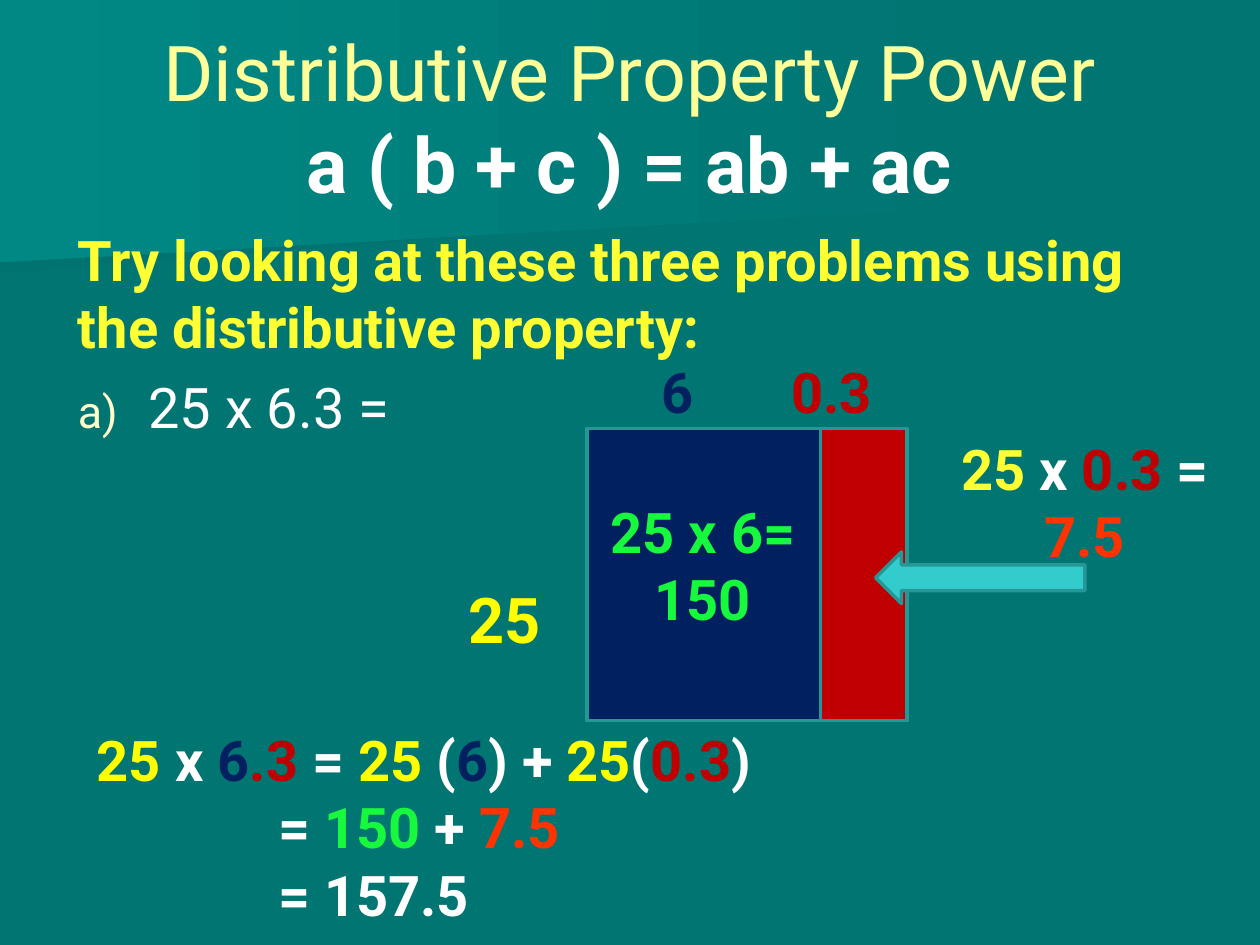
import pptx
import pptx.util
import pptx.dml.color
import pptx.enum.shapes
import pptx.enum.text
import pptx.oxml.ns
import lxml.etree

COLORS = {
    "teal": "007572", "shade": "00726F", "glow": "008885", "edge": "269797",
    "cream": "FFFF99", "bullet": "FFFFCC", "lemon": "FFFF33", "yellow": "FFFF00",
    "white": "FFFFFF", "navy": "002060", "red": "C00000", "orange": "FF3300",
    "green": "17F93D", "aqua": "33CCCC",
}
WIDTH, HEIGHT = pptx.util.Inches(10), pptx.util.Inches(7.5)
COLS, ROWS = 100, 75
CELL = WIDTH // COLS
SHAPE = pptx.enum.shapes.MSO_SHAPE
CENTER = pptx.enum.text.PP_ALIGN.CENTER


def rgb(name):
    return pptx.dml.color.RGBColor.from_string(COLORS[name])


def cells(*counts):
    return [round(n * CELL) for n in counts]


def add_lines(slide, box, lines, size=32, bold=True, align=None):
    tf = slide.shapes.add_textbox(*cells(*box)).text_frame
    tf.word_wrap = True
    for i, runs in enumerate(lines):
        p = tf.add_paragraph() if i else tf.paragraphs[0]
        p.font.name, p.font.size, p.font.bold = "Roboto", pptx.util.Pt(size), bold
        p.alignment = align
        for text, color in runs:
            r = p.add_run()
            r.text = text
            r.font.color.rgb = rgb(color)
    return tf


def indent(p, left, first=0):
    pPr = p._p.get_or_add_pPr()
    pPr.set("marL", str(cells(left)[0]))
    pPr.set("indent", str(cells(first)[0]))
    return pPr


def add_letter_bullet(p, color):
    pPr = indent(p, 5.6, -5.6)
    qn = pptx.oxml.ns.qn
    clr = lxml.etree.Element(qn("a:buClr"))
    lxml.etree.SubElement(clr, qn("a:srgbClr"), val=COLORS[color])
    size = lxml.etree.Element(qn("a:buSzPct"), val="80000")
    num = lxml.etree.Element(qn("a:buAutoNum"), type="alphaLcParenR")
    defaults = pPr.find(qn("a:defRPr"))
    for el in (clr, size, num):
        defaults.addprevious(el)


def add_block(slide, kind, box, color):
    sp = slide.shapes.add_shape(kind, *cells(*box))
    sp.shadow.inherit = False
    sp.fill.solid()
    sp.fill.fore_color.rgb = rgb(color)
    sp.line.color.rgb = rgb("edge")
    sp.line.width = pptx.util.Pt(2)


def add_band(slide, points, color):
    points = [cells(*point) for point in points]
    builder = slide.shapes.build_freeform(*points[0])
    builder.add_line_segments(points[1:])
    sp = builder.convert_to_shape()
    sp.shadow.inherit = False
    sp.line.fill.background()
    sp.fill.gradient()
    sp.fill.gradient_angle = 0
    for stop, name in zip(sp.fill.gradient_stops, (color, "teal")):
        stop.color.rgb = rgb(name)


def backdrop(slide, x, y, w, h):
    slide.background.fill.solid()
    slide.background.fill.fore_color.rgb = rgb("teal")
    mid, right = y + h * 0.47, x + w
    add_band(slide, [(right - 1.4, y + h * 0.71), (x, y + h), (x, mid),
                     (right - 1.3, mid)], "shade")
    add_band(slide, [(right, y + h * 0.75), (x, y + h * 0.96), (x, y),
                     (right, y)], "glow")


def heading(slide, x, y, w, h):
    tf = add_lines(slide, (x, y, w, h), [
        [("Distributive Property Power", "cream")],
        [("a ( b + c ) = ab + ac", "white")],
    ], size=44, bold=False, align=CENTER)
    tf.vertical_anchor = pptx.enum.text.MSO_ANCHOR.MIDDLE
    tf.paragraphs[1].font.bold = True


def problem(slide, x, y, w, h):
    tf = add_lines(slide, (x, y, w, h), [
        [("Try looking at these three problems using the distributive property:", "lemon")],
        [("25 x 6.3 =", "white")],
    ])
    p = tf.paragraphs[1]
    p.font.bold = False
    p.space_before = pptx.util.Pt(7)
    add_letter_bullet(p, "bullet")


def area_model(slide, x, y, w, h):
    whole = w * 0.73
    add_block(slide, SHAPE.RECTANGLE, (x, y, whole, h), "navy")
    add_block(slide, SHAPE.RECTANGLE, (x + whole, y, w - whole, h), "red")
    add_lines(slide, (x - 10.4, y + h / 2, 8.4, 7.1), [[("25", "yellow")]], size=36)
    add_lines(slide, (x + 4.9, y - 6.1, 6, 6), [[("6", "navy")]])
    add_lines(slide, (x + 15.2, y - 6.1, 10, 6), [[("0.3", "red")]])
    add_lines(slide, (x - 0.6, y + 5, 19.6, 11.8),
              [[("25 x 6=", "green")], [("150", "green")]], align=CENTER)


def side_product(slide, x, y, w, h):
    add_lines(slide, (x, y, w, h), [
        [("25", "lemon"), (" x ", "white"), ("0.3", "red"), (" =", "white")],
        [("7.5", "orange")],
    ], align=CENTER)
    add_block(slide, SHAPE.LEFT_ARROW, (x - 4, y + 9.8, 16.6, 4.1), "aqua")


def solution(slide, x, y, w, h):
    tf = add_lines(slide, (x, y, w, h), [
        [("25", "yellow"), (" x ", "white"), ("6", "navy"), (".3", "red"),
         (" = ", "white"), ("25", "yellow"), (" (", "white"), ("6", "navy"),
         (") + ", "white"), ("25", "yellow"), ("(", "white"), ("0.3", "red"),
         (")", "white")],
        [("= ", "white"), ("150", "green"), (" + ", "white"), ("7.5", "orange")],
        [("= 157.5", "white")],
    ])
    for p in tf.paragraphs[1:]:
        indent(p, 14.4)


def main():
    prs = pptx.Presentation()
    prs.slide_width, prs.slide_height = WIDTH, HEIGHT
    slide = prs.slides.add_slide(prs.slide_layouts[6])
    backdrop(slide, 0, 0, 79.2, 21.7)
    heading(slide, 5, 3, COLS - 10, 12.5)
    problem(slide, 5.2, 17.4, COLS - 10, 43.6)
    area_model(slide, 46.6, 34, 25.4, 23.2)
    side_product(slide, 73.5, 34, 25.2, 11.8)
    solution(slide, 6.7, 57.1, 63.7, ROWS - 57.8)
    prs.save("out.pptx")


if __name__ == "__main__":
    main()
